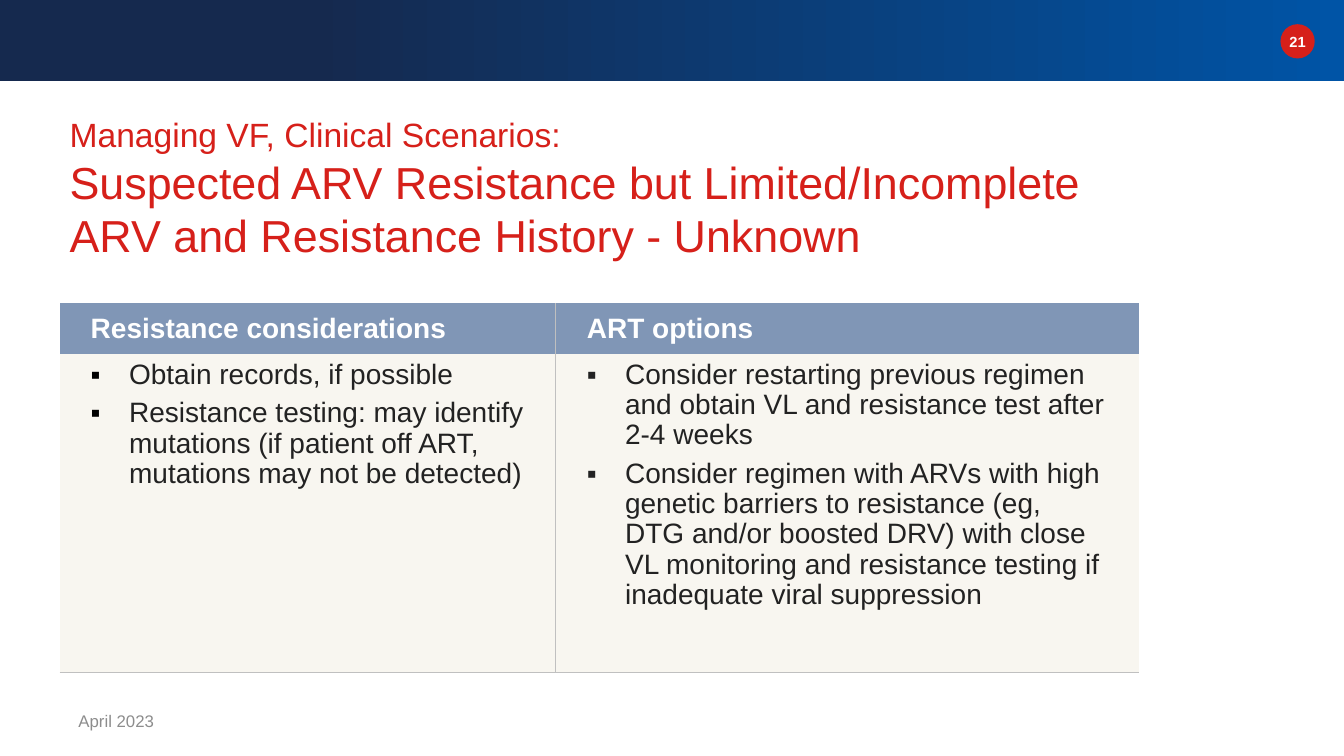
from lxml import etree
from pptx import Presentation
from pptx.dml.color import RGBColor
from pptx.enum import shapes, text
from pptx.oxml import ns
from pptx.util import Inches, Pt

COLORS = {
    "navy": "15294E", "blue": "0054A6", "red": "D6201A", "white": "FFFFFF",
    "header": "8096B6", "body": "F8F6F0", "ink": "222222", "black": "000000",
    "grey": "8D8D8D", "header_rule": "BFBFBF", "body_rule": "C0C0C0",
}
NO_STYLE = "{2D5ABB26-0587-4C30-8999-92F81FD0307C}"
HEADERS = ["Resistance considerations", "ART options"]
BULLETS = [
    ["Obtain records, if possible",
     "Resistance testing: may identify mutations (if patient off ART, "
     "mutations may not be detected)"],
    ["Consider restarting previous regimen and obtain VL and resistance test "
     "after 2-4 weeks",
     "Consider regimen with ARVs with high genetic barriers to resistance "
     "(eg, DTG and/or boosted DRV) with close VL monitoring and resistance "
     "testing if inadequate viral suppression"],
]


def rgb(name):
    return RGBColor.from_string(COLORS[name])


def sub(parent, tag, **attrs):
    return etree.SubElement(parent, ns.qn(tag), attrs)


def add_text(p, content, size, color, bold=False, align=None):
    r = p.add_run()
    r.text = content
    r.font.name = "Arial"
    r.font.size = Pt(size)
    r.font.bold = bold
    r.font.color.rgb = rgb(color)
    if align is not None:
        p.alignment = align


def add_box(s, box, content, size, color, **fmt):
    tf = s.shapes.add_textbox(*map(Inches, box)).text_frame
    tf.word_wrap = True
    tf.vertical_anchor = text.MSO_ANCHOR.MIDDLE
    add_text(tf.paragraphs[0], content, size, color, **fmt)


def add_shape(s, kind, box):
    sp = s.shapes.add_shape(kind, *map(Inches, box))
    sp.shadow.inherit = False
    sp.line.fill.background()
    return sp


def add_banner(s):
    fill = add_shape(s, shapes.MSO_SHAPE.RECTANGLE, (0, 0, 13.33, 0.8)).fill
    fill.gradient()
    fill.gradient_angle = 0
    stops = [(0.23, "navy"), (1, "blue")]
    for stop, (position, color) in zip(fill.gradient_stops, stops):
        stop.position = position
        stop.color.rgb = rgb(color)


def add_page_badge(s, number):
    fill = add_shape(s, shapes.MSO_SHAPE.OVAL, (12.7, 0.24, 0.34, 0.34)).fill
    fill.solid()
    fill.fore_color.rgb = rgb("red")
    add_box(s, (12.65, 0.27, 0.44, 0.28), number, 10.5, "white",
            bold=True, align=text.PP_ALIGN.CENTER)


def format_title(s):
    title = s.shapes.title
    title.left, title.top, title.width, title.height = map(
        Inches, (0.59, 1.05, 11.5, 1.84))
    tf = title.text_frame
    tf.word_wrap = True
    tf.auto_size = text.MSO_AUTO_SIZE.NONE
    tf.vertical_anchor = text.MSO_ANCHOR.TOP
    tf.margin_top = Inches(0.08)
    p = tf.paragraphs[0]
    p.alignment = text.PP_ALIGN.LEFT
    add_text(p, "Managing VF, Clinical Scenarios:", 24, "red")
    p.add_line_break()
    add_text(p, "Suspected ARV Resistance but Limited/Incomplete", 32, "red")
    p.add_line_break()
    add_text(p, "ARV and Resistance History - Unknown", 32, "red")


def format_cell(cell, fill, rule, sides):
    for side in sides:
        ln = sub(cell._tc.get_or_add_tcPr(), f"a:ln{side}", w=str(Pt(1)))
        sub(sub(ln, "a:solidFill"), "a:srgbClr", val=COLORS[rule])
    cell.fill.solid()
    cell.fill.fore_color.rgb = rgb(fill)
    cell.margin_left = cell.margin_right = Inches(0.31)
    cell.margin_top = cell.margin_bottom = Inches(0.06)


def add_bullet(p, content, bullet_color):
    p.line_spacing = 0.97
    p.space_after = Pt(6)
    pPr = p._p.get_or_add_pPr()
    pPr.set("marL", str(Inches(0.38)))
    pPr.set("indent", str(-Inches(0.38)))
    sub(sub(pPr, "a:buClr"), "a:srgbClr", val=COLORS[bullet_color])
    sub(pPr, "a:buFont", typeface="Arial")
    sub(pPr, "a:buChar", char="▪")
    add_text(p, content, 20, "ink")


def add_options_table(s):
    frame = s.shapes.add_table(2, 2, *map(Inches, (0.59, 3.01, 10.71, 3.66)))
    table = frame.table
    table.first_row = table.horz_banding = False
    table._tbl.tblPr.find(ns.qn("a:tableStyleId")).text = NO_STYLE
    for column, width in zip(table.columns, (4.92, 5.79)):
        column.width = Inches(width)
    for row, height in zip(table.rows, (0.5, 3.16)):
        row.height = Inches(height)
    for i, (inner, bullet_color) in enumerate([("R", "black"), ("L", "ink")]):
        head, body = table.cell(0, i), table.cell(1, i)
        format_cell(head, "header", "header_rule", [inner])
        format_cell(body, "body", "body_rule", [inner, "B"])
        head.vertical_anchor = text.MSO_ANCHOR.MIDDLE
        p = head.text_frame.paragraphs[0]
        p.line_spacing = 1.02
        add_text(p, HEADERS[i], 20, "white", bold=True)
        tf = body.text_frame
        for j, content in enumerate(BULLETS[i]):
            p = tf.add_paragraph() if j else tf.paragraphs[0]
            add_bullet(p, content, bullet_color)


def main():
    prs = Presentation()
    prs.slide_width, prs.slide_height = Inches(13.33), Inches(7.5)
    s = prs.slides.add_slide(prs.slide_layouts[5])
    add_banner(s)
    add_page_badge(s, "21")
    format_title(s)
    add_options_table(s)
    add_box(s, (0.68, 6.95, 3, 0.4), "April 2023", 12, "grey")
    prs.save("out.pptx")


if __name__ == "__main__":
    main()
